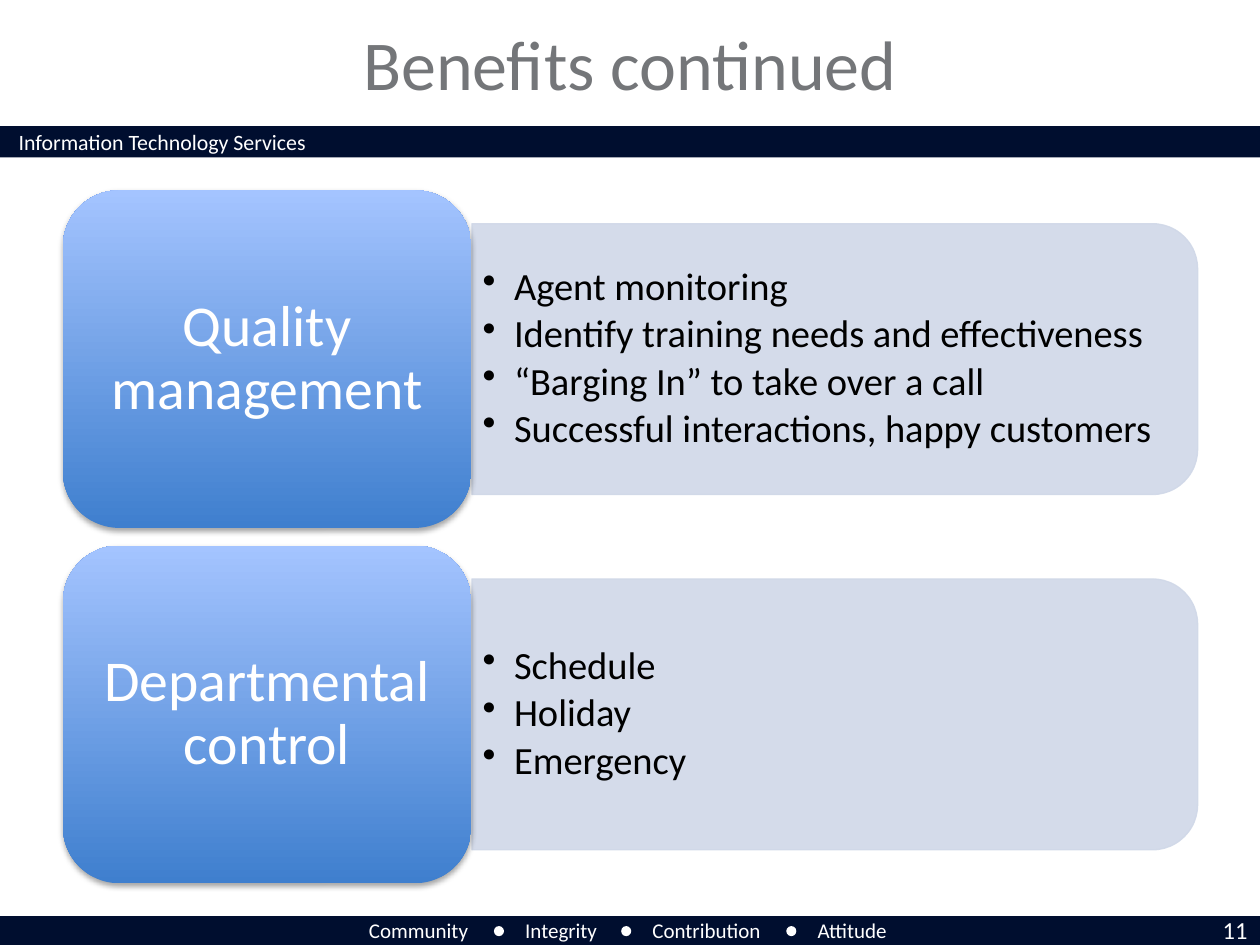
"""Build the "Benefits continued" slide with two labelled benefit rows."""
from lxml import etree
from pptx import Presentation
from pptx.dml.color import RGBColor
from pptx.enum.shapes import MSO_SHAPE
from pptx.enum.text import MSO_ANCHOR, PP_ALIGN
from pptx.oxml import parse_xml
from pptx.oxml.ns import nsdecls, qn
from pptx.util import Inches, Pt

RECTANGLE = MSO_SHAPE.RECTANGLE
OVAL = MSO_SHAPE.OVAL
ROUNDED = MSO_SHAPE.ROUNDED_RECTANGLE
ROUNDED_TOP = MSO_SHAPE.ROUND_2_SAME_RECTANGLE
LEFT, CENTER, RIGHT = PP_ALIGN.LEFT, PP_ALIGN.CENTER, PP_ALIGN.RIGHT
TOP, MIDDLE = MSO_ANCHOR.TOP, MSO_ANCHOR.MIDDLE

FONT = "Calibri"
COLORS = {
    "navy": "000E2F",
    "white": "FFFFFF",
    "black": "000000",
    "title": "747679",
    "panel": "D0D8E8",
    "tile_bottom": "3F7FCE",
    "tile_top": "A4C4FF",
}
ROWS = [
    ("Quality management", [
        "Agent monitoring",
        "Identify training needs and effectiveness",
        "“Barging In” to take over a call",
        "Successful interactions, happy customers",
    ]),
    ("Departmental control", ["Schedule", "Holiday", "Emergency"]),
]
ROW_TOP, ROW_PITCH = 1.51, 2.82
FOOTER_WORDS = [
    ("Community", 2.83, 1),
    ("Integrity", 4.07, 0.8),
    ("Contribution", 5.08, 1.1),
    ("Attitude", 6.39, 0.78),
]
FOOTER_DOTS = [3.92, 4.93, 6.24]


def color(name):
    return RGBColor.from_string(COLORS[name])


def style_font(font, size, color_name):
    font.name = FONT
    font.size = Pt(size)
    font.color.rgb = color(color_name)


def add_shape(slide, kind, left, top, width, height, fill=None):
    shape = slide.shapes.add_shape(
        kind, Inches(left), Inches(top), Inches(width), Inches(height))
    shape.shadow.inherit = False
    shape.line.fill.background()
    if fill:
        shape.fill.solid()
        shape.fill.fore_color.rgb = color(fill)
    return shape


def add_text(slide, lines, left, top, width, height, size, color_name="white",
             align=LEFT, anchor=TOP, insets=(0.1, 0.05), wrap=True):
    box = slide.shapes.add_textbox(
        Inches(left), Inches(top), Inches(width), Inches(height))
    frame = box.text_frame
    frame.word_wrap = wrap
    frame.vertical_anchor = anchor
    frame.margin_left = frame.margin_right = Inches(insets[0])
    frame.margin_top = frame.margin_bottom = Inches(insets[1])
    frame.text = "\n".join(lines)
    for paragraph in frame.paragraphs:
        paragraph.alignment = align
        style_font(paragraph.runs[0].font, size, color_name)
    return frame


def add_bullet(paragraph):
    properties = paragraph._p.get_or_add_pPr()
    properties.set("marL", str(Inches(0.25)))
    properties.set("indent", str(-Inches(0.25)))
    etree.SubElement(properties, qn("a:buChar")).set("char", "•")


def add_panel(slide, top, bullets):
    panel = add_shape(slide, ROUNDED_TOP, 5.55, top - 1.54, 2.15, 5.76, "panel")
    panel.rotation = 90
    panel.line.color.rgb = color("panel")
    panel.line.width = Pt(0.75)
    for rgb in panel._element.spPr.iter(qn("a:srgbClr")):
        etree.SubElement(rgb, qn("a:alpha")).set("val", "90000")
    frame = add_text(slide, bullets, 3.74, top + 0.37, 5.66, 1.94, 22, "black",
                     anchor=MIDDLE, insets=(0.09, 0.05))
    for paragraph in frame.paragraphs:
        add_bullet(paragraph)
        paragraph.line_spacing = 0.9
        paragraph.space_after = Pt(3.3)


def add_tile(slide, top, label):
    tile = add_shape(slide, ROUNDED, 0.5, top, 3.24, 2.68)
    tile.fill.gradient()
    tile.fill.gradient_angle = 90
    for stop, name in zip(tile.fill.gradient_stops, ("tile_bottom", "tile_top")):
        stop.color.rgb = color(name)
    properties = tile._element.spPr
    properties.replace(properties.find(qn("a:effectLst")), parse_xml(
        f'<a:effectLst {nsdecls("a")}>'
        f'<a:outerShdw blurRad="{Pt(3.1)}" dist="{Pt(1.8)}" dir="5400000" rotWithShape="0">'
        f'<a:srgbClr val="{COLORS["black"]}"><a:alpha val="35000"/></a:srgbClr>'
        '</a:outerShdw></a:effectLst>'))
    frame = add_text(slide, [label], 0.63, top + 0.13, 2.98, 2.42, 33,
                     align=CENTER, anchor=MIDDLE, insets=(0.14, 0.07))
    frame.paragraphs[0].line_spacing = 0.9


def add_bands(slide):
    for top in (1, 7.27):
        add_shape(slide, RECTANGLE, 0, top, 10, 0.25, "navy")
    add_text(slide, ["Information Technology Services"], 0.05, 0.97, 3.4, 0.32, 12.5)
    for word, left, width in FOOTER_WORDS:
        add_text(slide, [word], left, 7.23, width, 0.3, 12, wrap=False)
    for left in FOOTER_DOTS:
        add_shape(slide, OVAL, left, 7.35, 0.08, 0.08, "white")
    add_text(slide, ["11"], 9.24, 7.21, 0.76, 0.34, 14, align=RIGHT)


def set_title(slide, text):
    title = slide.shapes.title
    title.left, title.top = Inches(1), Inches(0.1)
    title.width, title.height = Inches(8), Inches(0.8)
    title.text_frame.text = text
    title.text_frame.vertical_anchor = MIDDLE
    paragraph = title.text_frame.paragraphs[0]
    paragraph.alignment = CENTER
    style_font(paragraph.runs[0].font, 40, "title")


def main():
    presentation = Presentation()
    presentation.slide_width, presentation.slide_height = Inches(10), Inches(7.5)
    slide = presentation.slides.add_slide(presentation.slide_layouts[5])
    add_bands(slide)
    set_title(slide, "Benefits continued")
    for index, (label, bullets) in enumerate(ROWS):
        top = ROW_TOP + index * ROW_PITCH
        add_panel(slide, top, bullets)
        add_tile(slide, top, label)
    presentation.save("out.pptx")


if __name__ == "__main__":
    main()
